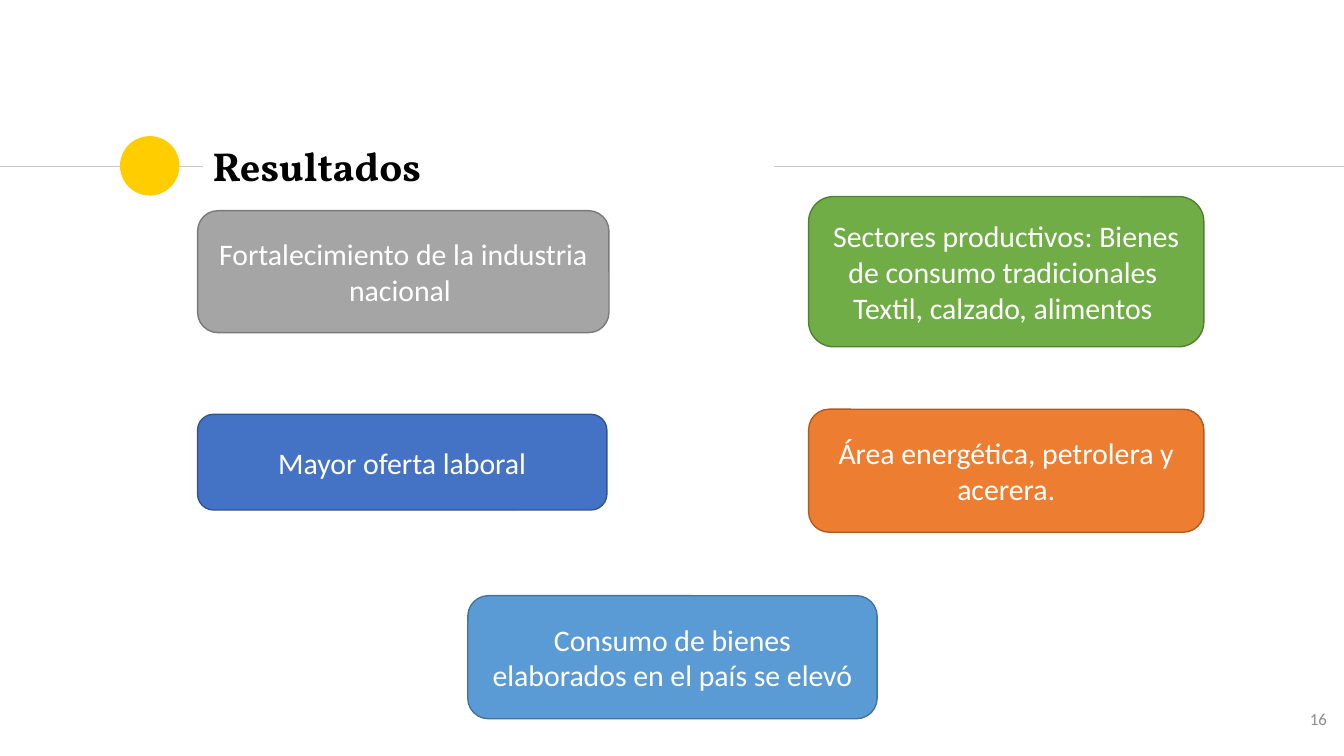
from lxml import etree
from pptx import Presentation
from pptx.dml.color import RGBColor
from pptx.enum.shapes import MSO_CONNECTOR as Connector, MSO_SHAPE as Shape
from pptx.enum.text import MSO_ANCHOR as Anchor, PP_ALIGN as Align
from pptx.oxml.ns import qn
from pptx.util import Inches, Pt

BLACK = RGBColor(0x00, 0x00, 0x00)
WHITE = RGBColor(0xFF, 0xFF, 0xFF)
RULE_GREY = RGBColor(0xCC, 0xCC, 0xCC)
NUMBER_GREY = RGBColor(0x8C, 0x8C, 0x8C)
YELLOW = RGBColor(0xFF, 0xCD, 0x00)
GREY, GREY_EDGE = RGBColor(0xA5, 0xA5, 0xA5), RGBColor(0x7A, 0x7A, 0x7A)
NAVY, NAVY_EDGE = RGBColor(0x44, 0x72, 0xC4), RGBColor(0x32, 0x54, 0x91)
BLUE, BLUE_EDGE = RGBColor(0x5B, 0x9B, 0xD5), RGBColor(0x43, 0x73, 0x9E)
GREEN, GREEN_EDGE = RGBColor(0x70, 0xAD, 0x47), RGBColor(0x53, 0x80, 0x35)
ORANGE, ORANGE_EDGE = RGBColor(0xED, 0x7D, 0x31), RGBColor(0xAF, 0x5C, 0x24)


def add_span(para, text, size, color, font="Calibri"):
    span = para.add_run()
    span.text = text
    span.font.size = Pt(size)
    span.font.name = font
    span.font.color.rgb = color
    return span


def add_label(left, top, width, height):
    """Add a wrapping text box with 0.1 inch insets and return its frame."""
    box = page.shapes.add_textbox(Inches(left), Inches(top), Inches(width), Inches(height))
    frame = box.text_frame
    frame.word_wrap = True
    frame.margin_left = frame.margin_right = Inches(0.1)
    frame.margin_top = frame.margin_bottom = Inches(0.1)
    return frame


deck = Presentation()
deck.slide_width, deck.slide_height = Inches(13.33), Inches(7.5)
page = deck.slides.add_slide(deck.slide_layouts[6])

# Title band: rules on both sides, yellow dot, title
for start, end in [(0, 2.01), (7.68, 13.33)]:
    rule = page.shapes.add_connector(
        Connector.STRAIGHT, Inches(start), Inches(1.65), Inches(end), Inches(1.65))
    rule.line.color.rgb = RULE_GREY
    rule.line.width = Pt(0.75)
    etree.SubElement(rule._element.spPr, qn("a:effectLst"))

dot = page.shapes.add_shape(Shape.OVAL, Inches(1.19), Inches(1.35), Inches(0.59), Inches(0.59))
dot.shadow.inherit = False
dot.fill.solid()
dot.fill.fore_color.rgb = YELLOW
dot.line.fill.background()

title = add_label(2.01, 1.35, 5.66, 0.64)
title.vertical_anchor = Anchor.MIDDLE
title.paragraphs[0].line_spacing = 0.9
add_span(title.paragraphs[0], "Resultados", 28.8, BLACK, "Vollkorn").font.bold = True

number = add_label(12.46, 6.93, 0.8, 0.57)
number.paragraphs[0].alignment = Align.RIGHT
add_span(number.paragraphs[0], "16", 12, NUMBER_GREY)

# Result cards: left, top, width, height, fill, edge, paragraphs
cards = [
    (1.96, 2.09, 4.08, 1.21, GREY, GREY_EDGE,
     ["Fortalecimiento de la industria nacional "]),
    (1.96, 4.11, 4.06, 0.95, NAVY, NAVY_EDGE, ["Mayor oferta laboral"]),
    (4.64, 5.91, 4.06, 1.22, BLUE, BLUE_EDGE,
     ["Consumo de bienes elaborados en el país se elevó"]),
    (8.02, 1.95, 3.92, 1.49, GREEN, GREEN_EDGE,
     ["Sectores productivos: Bienes de consumo tradicionales ",
      "Textil, calzado, alimentos "]),
    (8.02, 4.06, 3.92, 1.22, ORANGE, ORANGE_EDGE,
     ["Área energética, petrolera y acerera."]),
]
for left, top, width, height, fill, edge, texts in cards:
    card = page.shapes.add_shape(
        Shape.ROUNDED_RECTANGLE, Inches(left), Inches(top), Inches(width), Inches(height))
    card.shadow.inherit = False
    card.fill.solid()
    card.fill.fore_color.rgb = fill
    card.line.color.rgb = edge
    card.line.width = Pt(1)
    frame = card.text_frame
    frame.word_wrap = True
    frame.vertical_anchor = Anchor.MIDDLE
    for index, text in enumerate(texts):
        para = frame.add_paragraph() if index else frame.paragraphs[0]
        para.alignment = Align.CENTER
        add_span(para, text, 21.3, WHITE)

deck.save("out.pptx")
